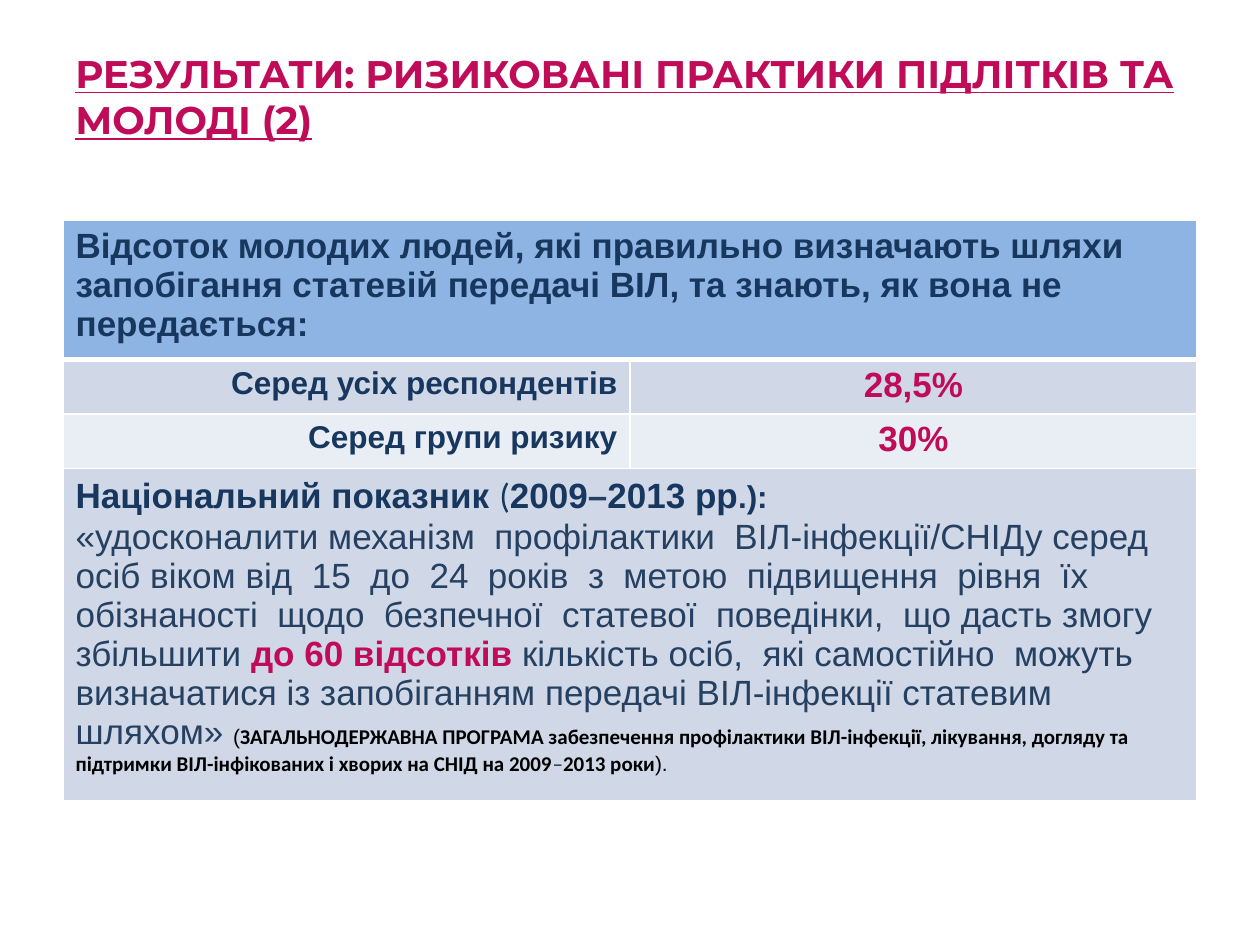
from lxml import etree
from pptx import Presentation, util as u
from pptx.dml.color import RGBColor
from pptx.enum import text
from pptx.oxml.ns import qn

NAVY, SLATE, PINK, BLACK, WHITE = "17375E", "254061", "BF0B58", "000000", "FFFFFF"
BLUE, GREY, PALE = "8EB4E3", "D0D8E8", "E9EDF4"
LEFT, CENTER, RIGHT = text.PP_ALIGN.LEFT, text.PP_ALIGN.CENTER, text.PP_ALIGN.RIGHT

TITLE = "РЕЗУЛЬТАТИ: РИЗИКОВАНІ ПРАКТИКИ ПІДЛІТКІВ ТА МОЛОДІ (2)"
QUESTION = ("Відсоток молодих людей, які правильно визначають шляхи запобігання "
            "статевій передачі ВІЛ, та знають, як вона не передається:")
SHARES = [("Серед усіх респондентів", "28,5%", GREY),
          ("Серед групи ризику", "30%", PALE)]
PLAIN = dict(color=SLATE, bold=False)
SOURCE = dict(size=12, color=BLACK)
NATIONAL = [
    [("Національний показник ", {}),
     ("(", dict(font="Calibri", bold=False)),
     ("2009", {}),
     ("–", dict(color=SLATE)),
     ("2013 рр", {}),
     (".):", dict(size=18))],
    [("«удосконалити механізм  профілактики  ВІЛ-інфекції/СНІДу серед осіб віком "
      "від  15  до  24  років  з  метою  підвищення  рівня  їх обізнаності  щодо  "
      "безпечної  статевої  поведінки,  що дасть змогу збільшити ", PLAIN),
     ("до 60 відсотків ", dict(color=PINK)),
     ("кількість осіб,  які самостійно  можуть визначатися із запобіганням передачі "
      "ВІЛ-інфекції статевим", PLAIN)],
    [("шляхом» ", PLAIN),
     ("(", dict(SOURCE, bold=False)),
     ("ЗАГАЛЬНОДЕРЖАВНА ПРОГРАМА забезпечення профілактики ВІЛ-інфекції, лікування, "
      "догляду та підтримки ВІЛ-інфікованих і хворих на СНІД на 2009",
      dict(SOURCE, font="Calibri")),
     ("–", dict(size=12, font="Calibri", color="0F243E", bold=False)),
     ("2013 роки", dict(SOURCE, font="Calibri")),
     (").", dict(SOURCE, bold=False))],
]

MARGIN, CONTENT_WIDTH, ROW_HEIGHT = 0.5, 9, 0.41


def rgb(color):
    return RGBColor.from_string(color)


def write(paragraph, words, size=20, font="Arial", color=NAVY, bold=True,
          underline=None, align=LEFT):
    paragraph.alignment = align
    run = paragraph.add_run()
    run.text = words
    run.font.size = u.Pt(size)
    run.font.name = font
    run.font.color.rgb = rgb(color)
    run.font.bold = bold
    run.font.underline = underline


def paint(cell, fill, bottom=1):
    cell.fill.solid()
    cell.fill.fore_color.rgb = rgb(fill)
    props = cell._tc.get_or_add_tcPr()
    for place, (side, width) in enumerate(
            [("lnL", 1), ("lnR", 1), ("lnT", 1), ("lnB", bottom)]):
        line = etree.Element(qn(f"a:{side}"), w=str(u.Pt(width)))
        solid = etree.SubElement(line, qn("a:solidFill"))
        etree.SubElement(solid, qn("a:srgbClr"), val=WHITE)
        props.insert(place, line)


def first_paragraph(cell):
    return cell.text_frame.paragraphs[0]


def add_title(slide):
    title = slide.shapes.add_textbox(u.Inches(MARGIN), u.Inches(0.3),
                                     u.Inches(CONTENT_WIDTH), u.Inches(0.93))
    title.text_frame.word_wrap = True
    title.text_frame.vertical_anchor = text.MSO_ANCHOR.MIDDLE
    write(title.text_frame.paragraphs[0], TITLE, size=22, font="Montserrat",
          color=PINK, underline=True)


def add_results(slide):
    row_count = len(SHARES) + 2
    results = slide.shapes.add_table(
        row_count, 2, u.Inches(MARGIN), u.Inches(1.75),
        u.Inches(CONTENT_WIDTH), u.Inches(ROW_HEIGHT * row_count)).table
    last = row_count - 1
    fills = [BLUE] + [fill for _, _, fill in SHARES] + [GREY]
    for row, fill in enumerate(fills):
        for column in range(2):
            paint(results.cell(row, column), fill, bottom=1 if row else 3)
    for row in (0, last):
        results.cell(row, 0).merge(results.cell(row, 1))

    write(first_paragraph(results.cell(0, 0)), QUESTION)
    for row, (group, share, _) in enumerate(SHARES, 1):
        write(first_paragraph(results.cell(row, 0)), group, size=18, align=RIGHT)
        write(first_paragraph(results.cell(row, 1)), share, color=PINK, align=CENTER)
    national = results.cell(last, 0)
    for index, runs in enumerate(NATIONAL):
        paragraph = national.text_frame.add_paragraph() if index else first_paragraph(national)
        for words, style in runs:
            write(paragraph, words, **style)


def main():
    deck = Presentation()
    deck.slide_width, deck.slide_height = u.Inches(10), u.Inches(7.5)
    slide = deck.slides.add_slide(deck.slide_layouts[6])
    add_title(slide)
    add_results(slide)
    deck.save("out.pptx")


if __name__ == "__main__":
    main()
